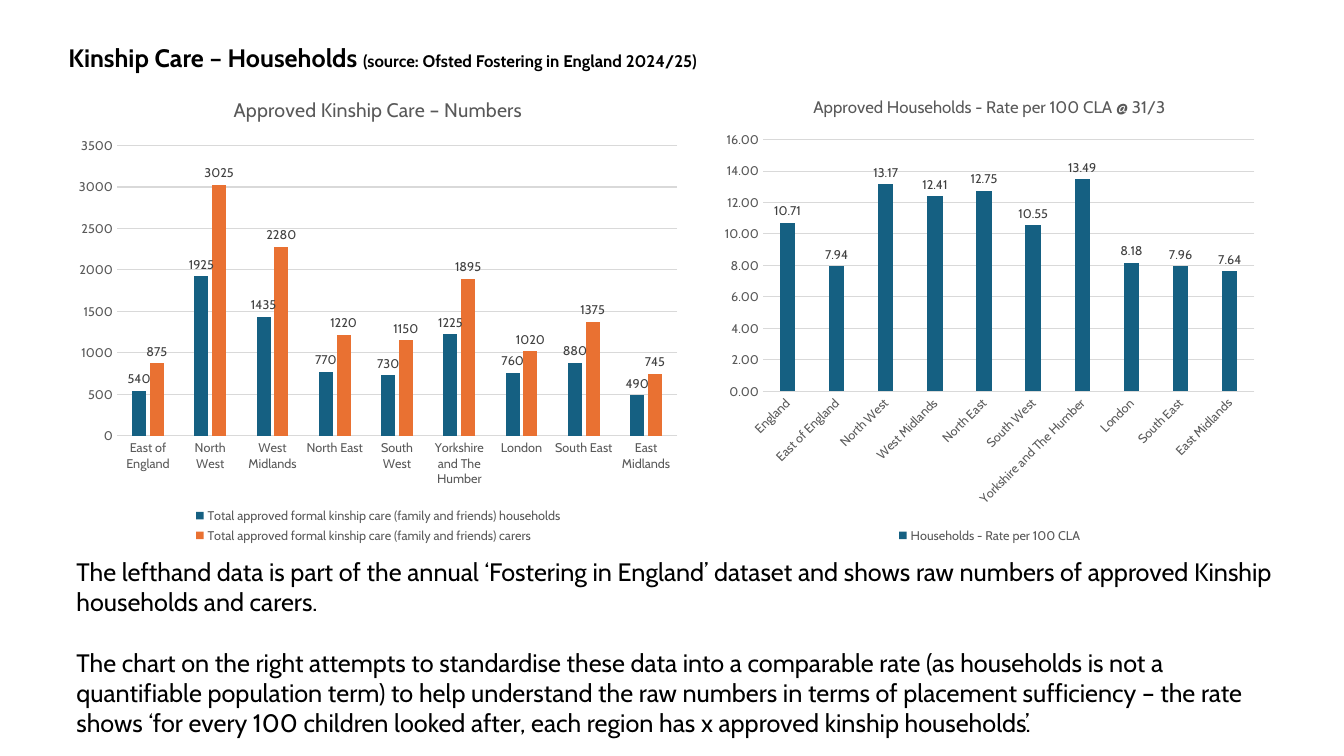
import pptx
import pptx.chart.data
import pptx.dml.color
import pptx.enum.chart
import pptx.enum.text
import pptx.util
from dataclasses import dataclass

Inches = pptx.util.Inches
Pt = pptx.util.Pt


@dataclass(frozen=True)
class Theme:
    font: str = "Cabin"
    ink: str = "000000"
    axis_text: str = "595959"
    label_text: str = "404040"
    grid: str = "D9D9D9"
    households: str = "156082"
    carers: str = "E97132"
    body_size: float = 18
    source_size: float = 12
    chart_size: float = 9
    paragraph_gap: float = 21.6


THEME = Theme()

REGION_COUNTS = [
    ("East of England", 540, 875),
    ("North West", 1925, 3025),
    ("West Midlands", 1435, 2280),
    ("North East", 770, 1220),
    ("South West", 730, 1150),
    ("Yorkshire and The Humber", 1225, 1895),
    ("London", 760, 1020),
    ("South East", 880, 1375),
    ("East Midlands", 490, 745),
]

REGION_RATES = [
    ("England", 10.71),
    ("East of England", 7.94),
    ("North West", 13.17),
    ("West Midlands", 12.41),
    ("North East", 12.75),
    ("South West", 10.55),
    ("Yorkshire and The Humber", 13.49),
    ("London", 8.18),
    ("South East", 7.96),
    ("East Midlands", 7.64),
]


def rgb(colour):
    return pptx.dml.color.RGBColor.from_string(colour)


def style_font(font, size=THEME.chart_size, colour=THEME.axis_text, bold=False):
    font.name = THEME.font
    font.size = Pt(size)
    font.bold = bold
    font.color.rgb = rgb(colour)


def write(paragraph, text, **font_format):
    run = paragraph.add_run()
    run.text = text
    style_font(run.font, **font_format)


def add_text(slide, left, top, width, height, paragraphs, gap=0):
    frame = slide.shapes.add_textbox(
        Inches(left), Inches(top), Inches(width), Inches(height)
    ).text_frame
    frame.word_wrap = True
    frame.auto_size = pptx.enum.text.MSO_AUTO_SIZE.SHAPE_TO_FIT_TEXT
    for index, runs in enumerate(paragraphs):
        paragraph = frame.add_paragraph() if index else frame.paragraphs[0]
        if index:
            paragraph.space_before = Pt(gap)
        for text, size, bold in runs:
            write(paragraph, text, size=size, colour=THEME.ink, bold=bold)


def style_axes(chart, number_format):
    for axis in (chart.category_axis, chart.value_axis):
        axis.major_tick_mark = pptx.enum.chart.XL_TICK_MARK.NONE
        axis.minor_tick_mark = pptx.enum.chart.XL_TICK_MARK.NONE
        style_font(axis.tick_labels.font)
    chart.value_axis.format.line.fill.background()
    chart.value_axis.tick_labels.number_format = number_format
    chart.value_axis.tick_labels.number_format_is_linked = False
    for line in (chart.category_axis.format.line,
                 chart.value_axis.major_gridlines.format.line):
        line.color.rgb = rgb(THEME.grid)
        line.width = Pt(0.75)


def style_series(series, colour, number_format):
    series.format.fill.solid()
    series.format.fill.fore_color.rgb = rgb(colour)
    series.invert_if_negative = False
    labels = series.data_labels
    labels.show_value = True
    labels.position = pptx.enum.chart.XL_LABEL_POSITION.OUTSIDE_END
    labels.number_format = number_format
    labels.number_format_is_linked = False
    style_font(labels.font, colour=THEME.label_text)


def add_column_chart(slide, left, width, title, title_size, rows, series_styles,
                     number_format="General"):
    regions, *columns = zip(*rows)
    data = pptx.chart.data.CategoryChartData(number_format=number_format)
    data.categories = regions
    for (name, _), values in zip(series_styles, columns):
        data.add_series(name, values)
    chart = slide.shapes.add_chart(
        pptx.enum.chart.XL_CHART_TYPE.COLUMN_CLUSTERED,
        Inches(left), Inches(0.77), Inches(width), Inches(4.66), data,
    ).chart
    style_font(chart.font, size=10, colour=THEME.ink)
    chart.has_title = True
    write(chart.chart_title.text_frame.paragraphs[0], title, size=title_size)
    chart.chart_title.include_in_layout = False
    chart.has_legend = True
    chart.legend.position = pptx.enum.chart.XL_LEGEND_POSITION.BOTTOM
    chart.legend.include_in_layout = False
    style_font(chart.legend.font)
    style_axes(chart, number_format)
    plot = chart.plots[0]
    plot.gap_width = 219
    plot.overlap = -27
    plot.vary_by_categories = False
    for series, (_, colour) in zip(plot.series, series_styles):
        style_series(series, colour, number_format)


def main():
    deck = pptx.Presentation()
    deck.slide_width = Inches(13.33)
    deck.slide_height = Inches(7.5)
    slide = deck.slides.add_slide(deck.slide_layouts[6])

    add_text(slide, 0.58, 0.37, 10.75, 0.4, [[
        ("Kinship Care – Households ", THEME.body_size, True),
        ("(source: Ofsted Fostering in England 2024/25)", THEME.source_size, True),
    ]])
    explanation = [
        "The lefthand data is part of the annual ‘Fostering in England’ dataset and "
        "shows raw numbers of approved Kinship households and carers.",
        "The chart on the right attempts to standardise these data into a comparable "
        "rate (as households is not a quantifiable population term) to help understand "
        "the raw numbers in terms of placement sufficiency – the rate shows ‘for every "
        "100 children looked after, each region has x approved kinship households’.",
    ]
    add_text(slide, 0.66, 5.47, 12.23, 1.92,
             [[(text, THEME.body_size, False)] for text in explanation],
             gap=THEME.paragraph_gap)

    add_column_chart(
        slide, 0.66, 6.18, "Approved Kinship Care – Numbers", 14, REGION_COUNTS,
        [("Total approved formal kinship care (family and friends) households",
          THEME.households),
         ("Total approved formal kinship care (family and friends) carers",
          THEME.carers)])
    add_column_chart(
        slide, 7.08, 5.47, "Approved Households - Rate per 100 CLA @ 31/3", 12,
        REGION_RATES, [("Households - Rate per 100 CLA", THEME.households)],
        number_format="0.00")

    deck.save("out.pptx")


if __name__ == "__main__":
    main()
